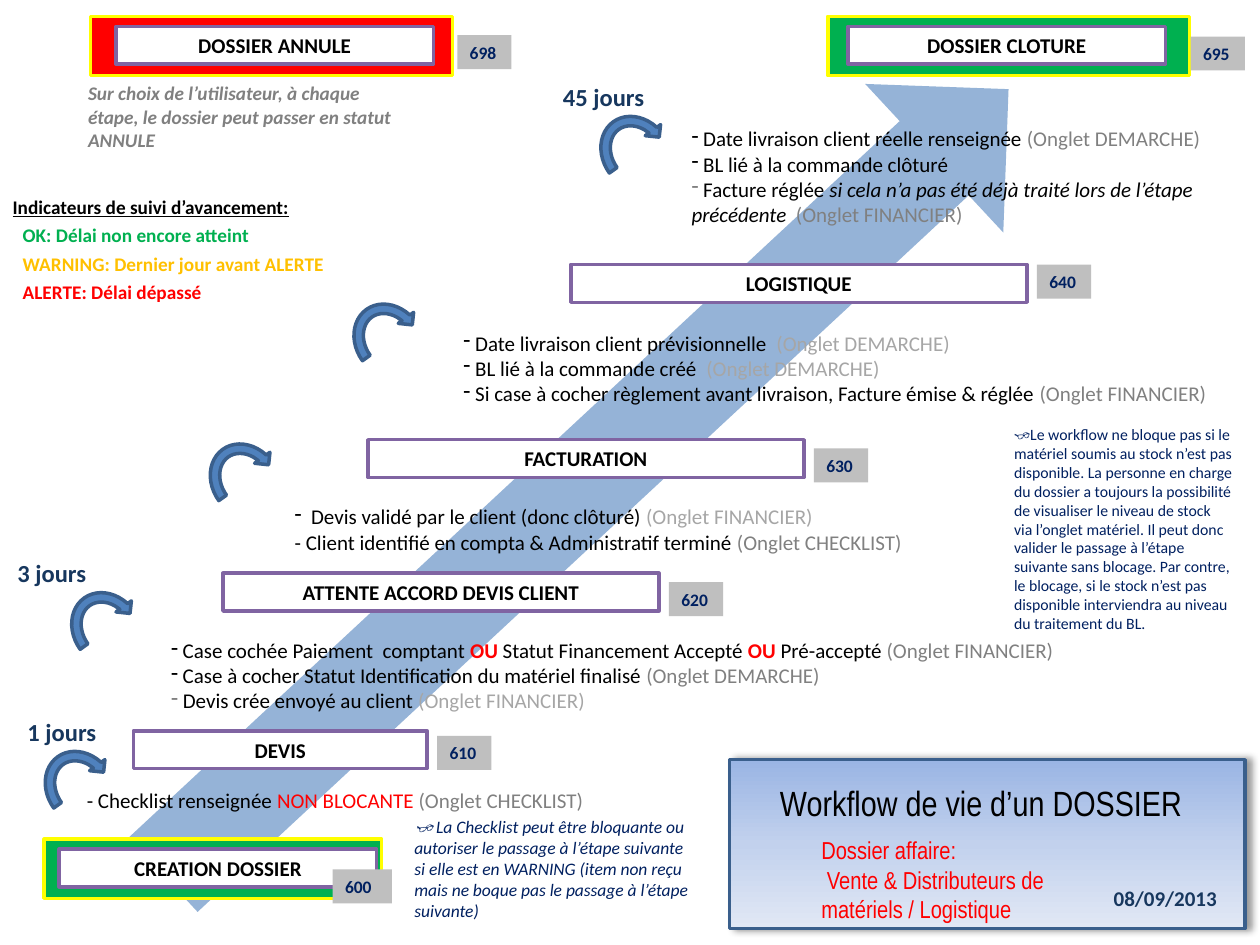
import dataclasses

import lxml.etree
import pptx
import pptx.dml.color
import pptx.enum.shapes
import pptx.enum.text
import pptx.oxml.ns
import pptx.util

Inches = pptx.util.Inches
SHAPES = pptx.enum.shapes.MSO_SHAPE
ANCHOR = pptx.enum.text.MSO_ANCHOR
ALIGN = pptx.enum.text.PP_ALIGN
qn = pptx.oxml.ns.qn


@dataclasses.dataclass(frozen=True)
class Theme:
    black: str = "000000"
    white: str = "FFFFFF"
    grey: str = "808080"
    light_grey: str = "A6A6A6"
    tag_grey: str = "BFBFBF"
    red: str = "FF0000"
    green: str = "00B050"
    amber: str = "FFC000"
    yellow: str = "FFFF00"
    purple: str = "8064A2"
    navy: str = "002060"
    dark_blue: str = "17375E"
    blue: str = "4F81BD"
    outline_blue: str = "3A5F8C"
    pale_blue: str = "95B3D7"
    panel_stops: tuple = ((0, "9AB5E4"), (50, "C2D1ED"), (100, "E1E8F5"))
    font: str = "Calibri"
    title_font: str = "Arial Narrow"
    title_size: float = 20
    heading_size: float = 14
    text_size: float = 12
    legend_size: float = 11
    note_size: float = 10
    small_size: float = 9
    line_width: float = 2


THEME = Theme()


@dataclasses.dataclass(frozen=True)
class Box:
    left: float
    top: float
    width: float
    height: float

    def inner(self, dx, dy, width, height):
        """Box whose offset is measured from this box's top-left corner."""
        return Box(self.left + dx, self.top + dy, width, height)

    def lengths(self):
        return [Inches(value) for value in dataclasses.astuple(self)]


def rgb(colour):
    return pptx.dml.color.RGBColor.from_string(colour)


def add_shape(slide, kind, box, fill, line=None, rotation=0):
    shape = slide.shapes.add_shape(kind, *box.lengths())
    shape.shadow.inherit = False
    shape.rotation = rotation
    shape.fill.solid()
    shape.fill.fore_color.rgb = rgb(fill)
    if line:
        shape.line.color.rgb = rgb(line)
        shape.line.width = pptx.util.Pt(THEME.line_width)
    else:
        shape.line.fill.background()
    return shape


def set_bullet(paragraph, character=None, margin=0):
    properties = paragraph._p.get_or_add_pPr()
    properties.set("marL", str(Inches(margin)))
    properties.set("indent", "0")
    if character:
        lxml.etree.SubElement(properties, qn("a:buChar")).set("char", character)
    else:
        lxml.etree.SubElement(properties, qn("a:buNone"))


def style_paragraph(paragraph, size, colour, font=THEME.font, bold=False, italic=False):
    paragraph.font.name = font
    paragraph.font.size = pptx.util.Pt(size)
    paragraph.font.color.rgb = rgb(colour)
    paragraph.font.bold = bold
    paragraph.font.italic = italic


def prepare_frame(shape, anchor=ANCHOR.TOP):
    frame = shape.text_frame
    frame.word_wrap = True
    frame.auto_size = pptx.enum.text.MSO_AUTO_SIZE.NONE
    frame.vertical_anchor = anchor
    return frame


def write(shape, lines, size, colour, align=ALIGN.LEFT, anchor=ANCHOR.TOP, **style):
    frame = prepare_frame(shape, anchor)
    for index, line in enumerate(lines):
        paragraph = frame.add_paragraph() if index else frame.paragraphs[0]
        paragraph.text = line
        paragraph.alignment = align
        style_paragraph(paragraph, size, colour, **style)


def add_text(slide, box, lines, size, colour, **style):
    write(slide.shapes.add_textbox(*box.lengths()), lines, size, colour, **style)


def place_placeholder(slide, placeholder, box):
    """Position the placeholder and bring it in front of the shapes drawn so far."""
    placeholder.left, placeholder.top, placeholder.width, placeholder.height = box.lengths()
    slide.shapes._spTree.append(placeholder._element)


def add_label(slide, box, text):
    label = add_shape(slide, SHAPES.RECTANGLE, box, THEME.white, THEME.purple)
    write(label, [text], THEME.text_size, THEME.black, align=ALIGN.CENTER,
          anchor=ANCHOR.MIDDLE, bold=True)


def add_tag(slide, box, code):
    tag = add_shape(slide, SHAPES.RECTANGLE, box, THEME.tag_grey)
    write(tag, [code], THEME.note_size, THEME.navy, anchor=ANCHOR.MIDDLE, bold=True)


def add_status(slide, box, fill, text, code, label_offset, tag_offset, tag_width=0.43):
    """Framed start or end status with its code."""
    add_shape(slide, SHAPES.RECTANGLE, box, fill, THEME.yellow)
    add_label(slide, box.inner(*label_offset, 2.52, 0.3), text)
    add_tag(slide, box.inner(*tag_offset, tag_width, 0.27), code)


def add_step(slide, box, text, code, tag_drop):
    add_label(slide, box, text)
    add_tag(slide, box.inner(box.width + 0.08, tag_drop, 0.43, 0.27), code)


def add_turn(slide, box, duration=None, duration_shift=0):
    """Curved arrow with an optional time limit above it."""
    add_shape(slide, SHAPES.CIRCULAR_ARROW, box, THEME.blue, THEME.outline_blue, 324.3)
    if duration:
        add_text(slide, box.inner(duration_shift, -0.27, 0.87, 0.34), [duration],
                 THEME.heading_size, THEME.dark_blue, bold=True)


def add_conditions(slide, box, conditions):
    """Each condition is a list of (text, colour, optional style letter) runs."""
    frame = prepare_frame(slide.shapes.add_textbox(*box.lengths()))
    for index, runs in enumerate(conditions):
        paragraph = frame.add_paragraph() if index else frame.paragraphs[0]
        if not runs[0][0].startswith("-"):
            set_bullet(paragraph, "-")
        style_paragraph(paragraph, THEME.text_size, THEME.black)
        for text, colour, *style in runs:
            run = paragraph.add_run()
            run.text = text
            run.font.color.rgb = rgb(colour)
            run.font.bold = "b" in style
            run.font.italic = "i" in style


def add_legend(slide, box):
    placeholder = slide.placeholders[1]
    place_placeholder(slide, placeholder, box)
    frame = prepare_frame(placeholder)
    lines = (("Indicateurs de suivi d’avancement:", THEME.black),
             ("OK: Délai non encore atteint", THEME.green),
             ("WARNING: Dernier jour avant ALERTE", THEME.amber),
             ("ALERTE: Délai dépassé", THEME.red))
    for index, (text, colour) in enumerate(lines):
        paragraph = frame.add_paragraph() if index else frame.paragraphs[0]
        paragraph.text = text
        paragraph.space_before = pptx.util.Pt(3 if index else 0)
        set_bullet(paragraph, margin=0.08 if index else 0)
        style_paragraph(paragraph, THEME.legend_size, colour, bold=True)
        paragraph.font.underline = index == 0


def add_title_panel(slide, box):
    panel = add_shape(slide, SHAPES.RECTANGLE, box, THEME.white, THEME.outline_blue)
    panel.fill.gradient()
    panel.fill.gradient_angle = 270
    stops = panel._element.spPr.find(".//" + qn("a:gsLst"))
    stops.clear()
    for position, colour in THEME.panel_stops:
        stop = lxml.etree.SubElement(stops, qn("a:gs"), pos=str(position * 1000))
        lxml.etree.SubElement(stop, qn("a:srgbClr"), val=colour)
    shadow = lxml.etree.SubElement(
        panel._element.spPr.find(qn("a:effectLst")), qn("a:outerShdw"),
        blurRad=str(pptx.util.Pt(4)), dist=str(pptx.util.Pt(3)), dir="0")
    shade = lxml.etree.SubElement(shadow, qn("a:srgbClr"), val=THEME.black)
    lxml.etree.SubElement(shade, qn("a:alpha"), val="40000")
    place_placeholder(slide, slide.shapes.title, box.inner(0.3, 0.12, 3.56, 0.44))
    write(slide.shapes.title, ["Workflow de vie d’un DOSSIER"], THEME.title_size,
          THEME.black, font=THEME.title_font)
    add_text(slide, box.inner(0.63, 0.55, 2.2, 0.81),
             ["Dossier affaire:", " Vente & Distributeurs de matériels / Logistique"],
             THEME.heading_size, THEME.red, font=THEME.title_font)
    add_text(slide, box.inner(2.95, 0.95, 1.08, 0.3), ["08/09/2013"],
             THEME.text_size, THEME.dark_blue, bold=True)


def add_all_conditions(slide):
    black, grey, light, red = THEME.black, THEME.grey, THEME.light_grey, THEME.red
    add_conditions(slide, Box(5.39, 0.95, 4.33, 0.91), [
        [(" Date livraison client réelle renseignée ", black), ("(Onglet DEMARCHE)", grey)],
        [(" BL lié à la commande clôturé", black)],
        [(" ", grey), ("Facture réglée ", black),
         ("si cela n’a pas été déjà traité lors de l’étape précédente  ", black, "i"),
         ("(Onglet FINANCIER)", grey)]])
    add_conditions(slide, Box(3.58, 2.57, 6.22, 0.71), [
        [(" Date livraison client prévisionnelle  ", black), ("(Onglet DEMARCHE)", light)],
        [(" BL lié à la commande créé  ", black), ("(Onglet DEMARCHE)", light)],
        [(" Si case à cocher règlement avant livraison, Facture émise & réglée ", black),
         ("(Onglet FINANCIER)", grey)]])
    add_conditions(slide, Box(2.24, 3.95, 5.51, 0.5), [
        [("  Devis validé par le client (donc clôturé) ", black), ("(Onglet FINANCIER)", light)],
        [("- Client identifié en compta & Administratif terminé ", black),
         ("(Onglet CHECKLIST)", grey)]])
    add_conditions(slide, Box(1.26, 5.01, 7.44, 0.71), [
        [(" Case cochée Paiement  comptant ", black), ("OU", red, "b"),
         (" Statut Financement Accepté ", black), ("OU", red, "b"),
         (" Pré-accepté ", black), ("(Onglet FINANCIER)", grey)],
        [(" Case à cocher Statut Identification du matériel finalisé ", black),
         ("(Onglet DEMARCHE)", grey)],
        [(" ", grey), ("Devis crée envoyé au client ", black), ("(Onglet FINANCIER)", light)]])
    add_conditions(slide, Box(0.59, 6.2, 4.72, 0.3), [
        [("- Checklist renseignée ", black), ("NON BLOCANTE", red), (" (Onglet CHECKLIST)", grey)]])


def add_notes(slide):
    add_text(slide, Box(0.6, 0.6, 2.75, 0.66),
             ["Sur choix de l’utilisateur, à chaque étape, le dossier peut passer en statut ANNULE"],
             THEME.legend_size, THEME.grey, bold=True, italic=True)
    add_text(slide, Box(3.19, 6.43, 2.44, 0.94),
             ["👓 La Checklist peut être bloquante ou autoriser le passage à l’étape suivante si elle "
              "est en WARNING (item non reçu mais ne boque pas le passage à l’étape suivante)"],
             THEME.note_size, THEME.navy, italic=True)
    add_text(slide, Box(7.95, 3.32, 1.93, 1.77),
             ["👓Le workflow ne bloque pas si le matériel soumis au stock n’est pas disponible. La "
              "personne en charge du dossier a toujours la possibilité de visualiser le niveau de "
              "stock via l’onglet matériel. Il peut donc valider le passage à l’étape suivante sans "
              "blocage. Par contre, le blocage, si le stock n’est pas disponible interviendra au "
              "niveau du traitement du BL."], THEME.small_size, THEME.navy)


def main():
    presentation = pptx.Presentation()
    presentation.slide_width, presentation.slide_height = Inches(10), Inches(7.5)
    slide = presentation.slides.add_slide(presentation.slide_layouts[1])
    add_shape(slide, SHAPES.RIGHT_ARROW, Box(0.07, 3.02, 9.16, 1.61), THEME.pale_blue,
              rotation=317.1)
    add_title_panel(slide, Box(5.79, 6.03, 4.09, 1.34))
    add_status(slide, Box(0.35, 6.66, 2.68, 0.47), THEME.green, "CREATION DOSSIER", "600",
               (0.12, 0.08), (2.29, 0.24), 0.47)
    add_status(slide, Box(0.72, 0.13, 2.87, 0.47), THEME.red, "DOSSIER ANNULE", "698",
               (0.2, 0.08), (2.91, 0.15))
    add_status(slide, Box(6.57, 0.13, 2.87, 0.47), THEME.green, "DOSSIER CLOTURE", "695",
               (0.16, 0.08), (2.88, 0.16))
    for left, top, width, text, code, tag_drop in (
            (1.06, 5.8, 2.33, "DEVIS", "610", 0.04),
            (1.77, 4.55, 3.46, "ATTENTE ACCORD DEVIS CLIENT", "620", 0.07),
            (2.92, 3.49, 3.46, "FACTURATION", "630", 0.07),
            (4.53, 2.1, 3.62, "LOGISTIQUE", "640", 0)):
        add_step(slide, Box(left, top, width, 0.3), text, code, tag_drop)
    for left, top, *duration in (
            (0.34, 5.91, "1 jours", -0.22), (0.55, 4.65, "3 jours", -0.51),
            (1.65, 3.47), (2.79, 2.36), (4.75, 0.87, "45 jours", -0.38)):
        add_turn(slide, Box(left, top, 0.6, 0.7), *duration)
    add_legend(slide, Box(0, 1.5, 3.46, 0.97))
    add_all_conditions(slide)
    add_notes(slide)
    presentation.save("out.pptx")


if __name__ == "__main__":
    main()
